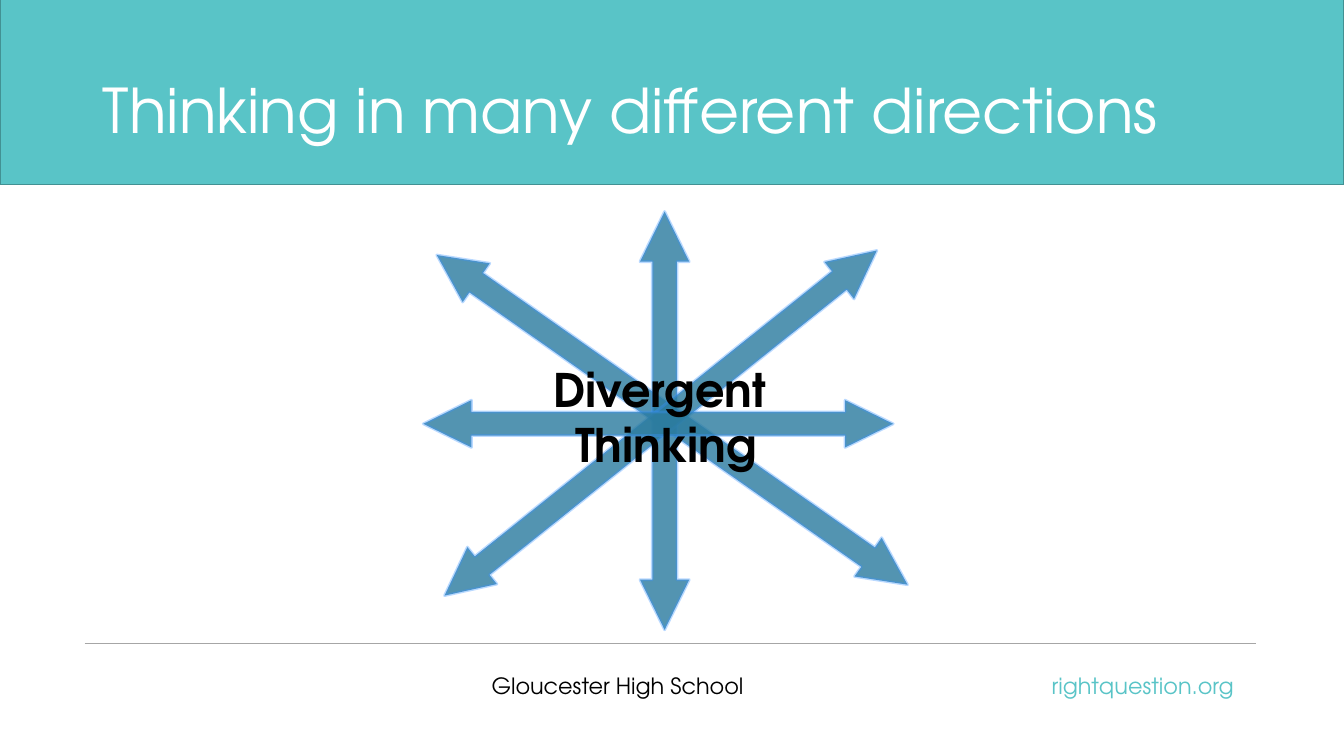
from lxml import etree
from pptx import Presentation
from pptx.dml.color import RGBColor
from pptx.enum import shapes, text
from pptx.oxml import ns
from pptx.util import Cm, Pt

FONT = "TeX Gyre Adventor"
TEAL = RGBColor(0x59, 0xC4, 0xC7)
DARK_TEAL = RGBColor(0x42, 0x91, 0x93)
BLUE = RGBColor(0x2C, 0x7C, 0x9F)
BRIGHT_BLUE = RGBColor(0x3A, 0x93, 0xFF)
GREY = RGBColor(0xA6, 0xA6, 0xA6)
BLACK = RGBColor(0, 0, 0)
WHITE = RGBColor(0xFF, 0xFF, 0xFF)

TITLE_ONLY = 5
SLIDE_WIDTH, SLIDE_HEIGHT = 33.87, 19.05

# Centre x, centre y, length, thickness (cm) and rotation (degrees)
ARROWS = [
    (16.94, 10.58, 14.48, 1.19, 215),
    (16.75, 10.6, 10.54, 1.24, 270),
    (16.65, 10.66, 13.94, 1.19, 141.4),
    (16.59, 10.68, 11.84, 1.19, 0),
]


def place(shape, left, top, width, height):
    shape.left, shape.top = Cm(left), Cm(top)
    shape.width, shape.height = Cm(width), Cm(height)


def set_opacity(fill_format, percent):
    color = fill_format._xPr.find(".//" + ns.qn("a:srgbClr"))
    etree.SubElement(color, ns.qn("a:alpha"), val=str(percent * 1000))


def write(shape, lines, size, color=BLACK, bold=False, spacing=1.0,
          align=text.PP_ALIGN.LEFT, anchor=text.MSO_ANCHOR.TOP):
    frame = shape.text_frame
    frame.word_wrap = True
    frame.auto_size = text.MSO_AUTO_SIZE.NONE
    frame.vertical_anchor = anchor
    frame.text = lines
    for paragraph in frame.paragraphs:
        paragraph.alignment = align
        paragraph.line_spacing = spacing
        font = paragraph.runs[0].font
        font.name, font.size, font.bold = FONT, Pt(size), bold
        font.color.rgb = color


def add_text(parent, lines, left, top, width, height, **text_format):
    box = parent.shapes.add_textbox(Cm(left), Cm(top), Cm(width), Cm(height))
    write(box, lines, **text_format)


def add_shape(parent, kind, left, top, width, height, fill, line, line_width):
    shape = parent.shapes.add_shape(kind, Cm(left), Cm(top), Cm(width), Cm(height))
    shape.shadow.inherit = False
    shape.fill.solid()
    shape.fill.fore_color.rgb = fill
    shape.line.color.rgb = line
    shape.line.width = Pt(line_width)
    return shape


def add_double_arrow(parent, center_x, center_y, length, thickness, rotation):
    arrow = add_shape(parent, shapes.MSO_SHAPE.LEFT_RIGHT_ARROW,
                      center_x - length / 2, center_y - thickness / 2,
                      length, thickness, BLUE, BRIGHT_BLUE, 2)
    arrow.adjustments[0] = 0.5
    arrow.adjustments[1] = 1.018
    arrow.rotation = rotation
    set_opacity(arrow.fill, 81)
    set_opacity(arrow.line.fill, 34)


def add_rule(slide, left, right, y):
    rule = slide.shapes.add_connector(shapes.MSO_CONNECTOR.STRAIGHT,
                                      Cm(left), Cm(y), Cm(right), Cm(y))
    rule.line.color.rgb = GREY
    rule.line.width = Pt(0.5)
    etree.SubElement(rule._element.spPr, ns.qn("a:effectLst"))


def main():
    presentation = Presentation()
    presentation.slide_width = Cm(SLIDE_WIDTH)
    presentation.slide_height = Cm(SLIDE_HEIGHT)
    slide = presentation.slides.add_slide(presentation.slide_layouts[TITLE_ONLY])

    # Header band
    add_shape(slide, shapes.MSO_SHAPE.RECTANGLE, 0, -0.05, SLIDE_WIDTH, 4.7,
              TEAL, DARK_TEAL, 1)

    # Footer
    add_text(slide, "Gloucester High School", 12.14, 16.89, 7.65, 1.7,
             size=16, spacing=0.9)
    add_text(slide, "rightquestion.org", 23.7, 16.89, 7.65, 1.7,
             size=16, spacing=0.9, color=TEAL, align=text.PP_ALIGN.RIGHT)
    add_rule(slide, 2.13, 31.65, 16.21)

    # Arrows in all directions around the caption
    diagram = slide.shapes.add_group_shape()
    for arrow in ARROWS:
        add_double_arrow(diagram, *arrow)
    add_text(diagram, "Divergent \nThinking", 10.95, 8.51, 11.68, 3.51,
             size=33, bold=True, align=text.PP_ALIGN.CENTER,
             anchor=text.MSO_ANCHOR.BOTTOM)

    # Title, brought in front of the band
    title = slide.shapes.title
    place(title, 2.34, 1.02, 29.21, 3.68)
    write(title, "Thinking in many different directions", size=44, color=WHITE,
          spacing=0.9, anchor=text.MSO_ANCHOR.MIDDLE)
    slide.shapes._spTree.append(title._element)

    presentation.save("out.pptx")


if __name__ == "__main__":
    main()
